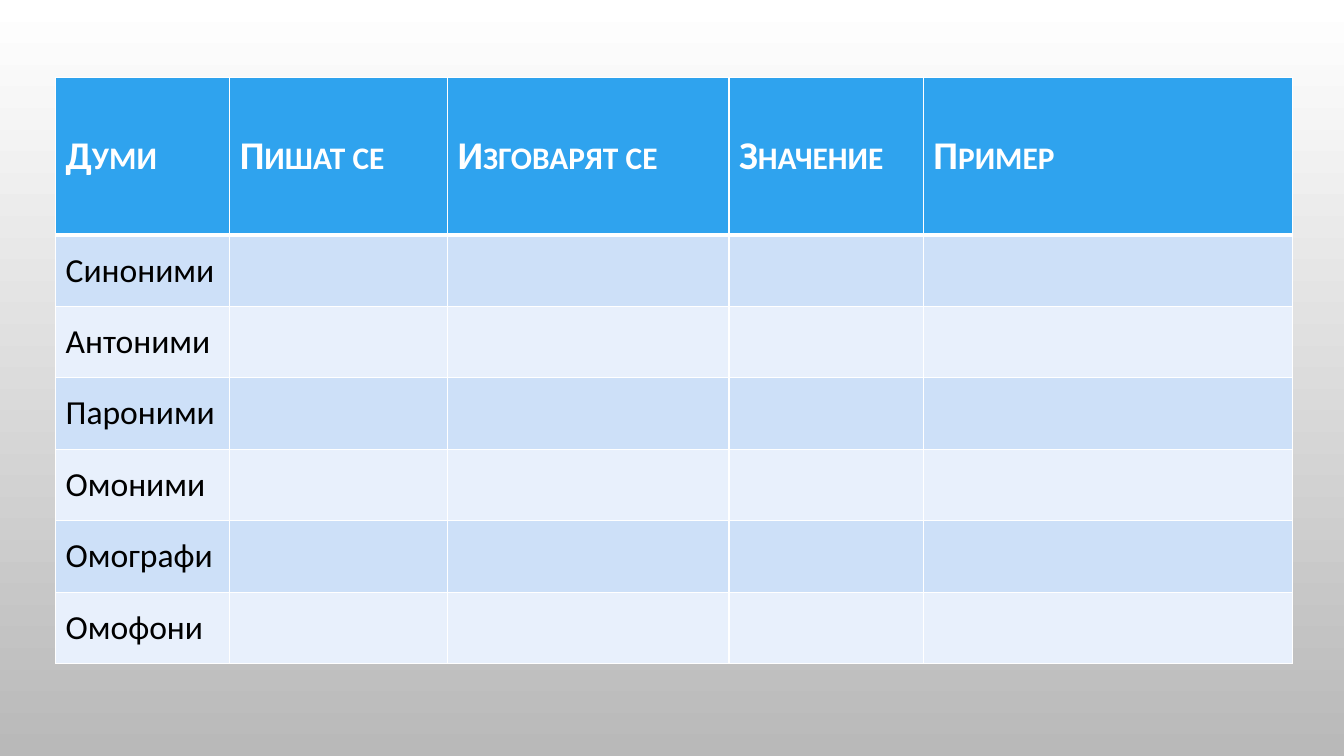
from lxml.etree import SubElement
from pptx import Presentation
from pptx.dml.color import RGBColor
from pptx.enum.text import MSO_ANCHOR as Anchor
from pptx.oxml.ns import qn
from pptx.util import Cm, Pt

HEADINGS = ["Думи", "Пишат се", "Изговарят се", "Значение", "Пример"]
WORD_TYPES = ["Синоними", "Антоними", "Пароними", "Омоними", "Омографи", "Омофони"]
COLUMN_WIDTHS = [4.39, 5.49, 7.09, 4.9, 9.3]
HEADER_HEIGHT, ROW_HEIGHT = 3.96, 1.8
WHITE, BLACK, HEADER_BLUE = "FFFFFF", "000000", "2FA3EE"
BANDS = ["CDE0F8", "E8F0FC"]


def color(hex_code):
    return RGBColor.from_string(hex_code)


def paint_background(page, top, bottom):
    fill = page.background.fill
    fill.gradient()
    fill.gradient_angle = 270
    for stop, hex_code in zip(fill.gradient_stops, [top, bottom]):
        stop.color.rgb = color(hex_code)


def set_borders(cell, bottom_width):
    properties = cell._tc.get_or_add_tcPr()
    for side, width in [("L", 1), ("R", 1), ("T", 1), ("B", bottom_width)]:
        line = SubElement(properties, qn(f"a:ln{side}"), w=str(Pt(width)))
        solid = SubElement(line, qn("a:solidFill"))
        SubElement(solid, qn("a:srgbClr"), val=WHITE)


def style_cell(cell, fill, bottom_width=1):
    set_borders(cell, bottom_width)
    cell.fill.solid()
    cell.fill.fore_color.rgb = color(fill)
    cell.vertical_anchor = Anchor.MIDDLE


def write_cell(cell, text, size, hex_code, heading=False):
    para = cell.text_frame.paragraphs[0]
    para.text = text
    font = para.font
    font.name, font.size, font.bold = "Calibri", Pt(size), heading
    font.color.rgb = color(hex_code)
    if heading:
        para._p.pPr.defRPr.set("cap", "small")


def add_word_table(page):
    row_heights = [HEADER_HEIGHT] + [ROW_HEIGHT] * len(WORD_TYPES)
    frame = page.shapes.add_table(
        len(row_heights), len(HEADINGS), Cm(1.4), Cm(1.96),
        Cm(sum(COLUMN_WIDTHS)), Cm(sum(row_heights)))
    table = frame.table
    for column, width in zip(table.columns, COLUMN_WIDTHS):
        column.width = Cm(width)
    for row, height in zip(table.rows, row_heights):
        row.height = Cm(height)

    # Header row
    for cell, heading in zip(table.rows[0].cells, HEADINGS):
        style_cell(cell, HEADER_BLUE, bottom_width=3)
        write_cell(cell, heading, 28, WHITE, heading=True)

    # Banded rows, one for each type of word
    for index, word_type in enumerate(WORD_TYPES):
        cells = table.rows[index + 1].cells
        for cell in cells:
            style_cell(cell, BANDS[index % 2])
        write_cell(cells[0], word_type, 24, BLACK)


def main():
    deck = Presentation()
    deck.slide_width, deck.slide_height = Cm(33.87), Cm(19.05)
    page = deck.slides.add_slide(deck.slide_layouts[6])
    paint_background(page, WHITE, "B9B9B9")
    add_word_table(page)
    deck.save("out.pptx")


if __name__ == "__main__":
    main()
